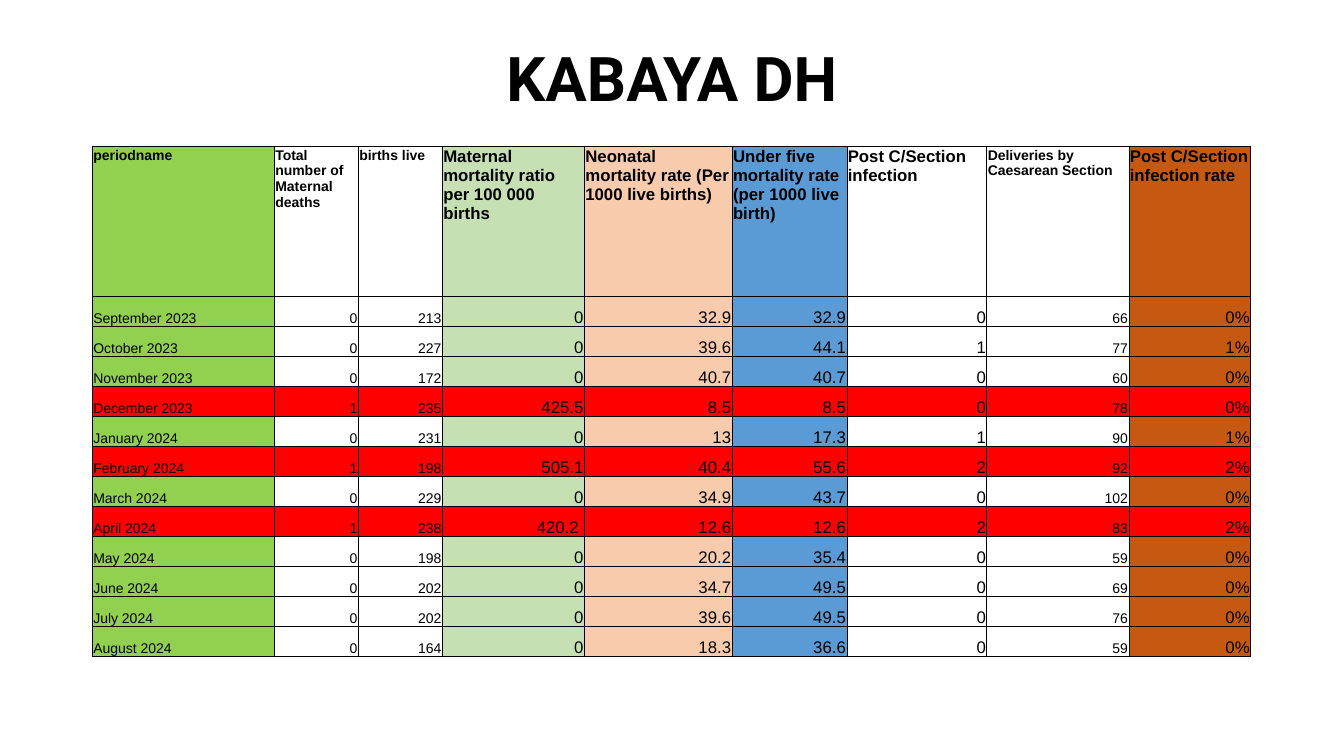
from lxml import etree
from pptx import Presentation
from pptx.dml.color import RGBColor
from pptx.enum import text as t
from pptx.oxml import ns
from pptx.util import Pt

THEME = {
    "ink": "000000", "alert": "FF0000", "white": "FFFFFF",
    "green": "92D050", "mint": "C6E0B4", "peach": "F8CBAD",
    "blue": "5B9BD5", "rust": "C65911",
    "title": 44, "large": 12, "small": 10,
    "title_font": "Roboto", "font": "Arial",
}

# Heading, width, fill and type size of each column
COLUMNS = [
    ("periodname", 130, "green", "small"),
    ("Total number of Maternal deaths", 60, None, "small"),
    ("births live", 60, None, "small"),
    ("Maternal mortality ratio per 100 000 births", 101.5, "mint", "large"),
    ("Neonatal mortality rate (Per 1000 live births)", 105.5, "peach", "large"),
    ("Under five mortality rate (per 1000 live birth)", 82, "blue", "large"),
    ("Post C/Section infection", 100, "white", "large"),
    ("Deliveries by Caesarean Section", 101.5, None, "small"),
    ("Post C/Section infection rate", 87, "rust", "large"),
]
MONTHS = [
    ("September 2023", "0", "213", "0", "32.9", "32.9", "0", "66", "0%"),
    ("October 2023", "0", "227", "0", "39.6", "44.1", "1", "77", "1%"),
    ("November 2023", "0", "172", "0", "40.7", "40.7", "0", "60", "0%"),
    ("December 2023", "1", "235", "425.5", "8.5", "8.5", "0", "78", "0%"),
    ("January 2024", "0", "231", "0", "13", "17.3", "1", "90", "1%"),
    ("February 2024", "1", "198", "505.1", "40.4", "55.6", "2", "92", "2%"),
    ("March 2024", "0", "229", "0", "34.9", "43.7", "0", "102", "0%"),
    ("April 2024", "1", "238", "420.2 ", "12.6", "12.6", "2", "83", "2%"),
    ("May 2024", "0", "198", "0", "20.2", "35.4", "0", "59", "0%"),
    ("June 2024", "0", "202", "0", "34.7", "49.5", "0", "69", "0%"),
    ("July 2024", "0", "202", "0", "39.6", "49.5", "0", "76", "0%"),
    ("August 2024", "0", "164", "0", "18.3", "36.6", "0", "59", "0%"),
]
HEADER_H, ROW_H = 107.1, 21.43


def write(tf, text, size="small", font="font", bold=False, align="LEFT"):
    p = tf.paragraphs[0]
    p.alignment = getattr(t.PP_ALIGN, align)
    r = p.add_run()
    r.text = text
    r.font.name = THEME[font]
    r.font.size = Pt(THEME[size])
    r.font.bold = bold
    r.font.color.rgb = RGBColor.from_string(THEME["ink"])
    return p


def add_borders(cell):
    tc_pr = cell._tc.get_or_add_tcPr()
    for side in ("a:lnL", "a:lnR", "a:lnT", "a:lnB"):
        ln = etree.SubElement(tc_pr, ns.qn(side), w=str(Pt(0.5)))
        fill = etree.SubElement(ln, ns.qn("a:solidFill"))
        etree.SubElement(fill, ns.qn("a:srgbClr"), val=THEME["ink"])


prs = Presentation()
prs.slide_width, prs.slide_height = Pt(960), Pt(540)
s = prs.slides.add_slide(prs.slide_layouts[5])

# Title
title = s.shapes.title
title.left, title.top, title.width, title.height = Pt(66), Pt(28.8), Pt(828), Pt(58.3)
tf = title.text_frame
tf.word_wrap = True
tf.auto_size = t.MSO_AUTO_SIZE.NONE
tf.vertical_anchor = t.MSO_ANCHOR.MIDDLE
p = write(tf, "KABAYA DH", size="title", font="title_font", bold=True, align="CENTER")
p.line_spacing = 0.9

# Table grid
rows = [[column[0] for column in COLUMNS], *MONTHS]
width = sum(column[1] for column in COLUMNS)
height = HEADER_H + ROW_H * len(MONTHS)
table = s.shapes.add_table(len(rows), len(COLUMNS), Pt(66), Pt(104.8),
                           Pt(width), Pt(height)).table
table.first_row = table.horz_banding = False
for col, column in zip(table.columns, COLUMNS):
    col.width = Pt(column[1])
for i, row in enumerate(table.rows):
    row.height = Pt(ROW_H if i else HEADER_H)

# Cells: a month with a maternal death is red throughout
for i, values in enumerate(rows):
    for j, (value, (_, _, fill, size)) in enumerate(zip(values, COLUMNS)):
        cell = table.cell(i, j)
        cell.margin_left = cell.margin_right = cell.margin_top = Pt(0.7)
        cell.margin_bottom = 0
        cell.vertical_anchor = t.MSO_ANCHOR.BOTTOM if i else t.MSO_ANCHOR.TOP
        add_borders(cell)
        if values[1] == "1":
            fill = "alert"
        if fill:
            cell.fill.solid()
            cell.fill.fore_color.rgb = RGBColor.from_string(THEME[fill])
        else:
            cell.fill.background()
        write(cell.text_frame, value, size=size, bold=i == 0,
              align="RIGHT" if i and j else "LEFT")

prs.save("out.pptx")
